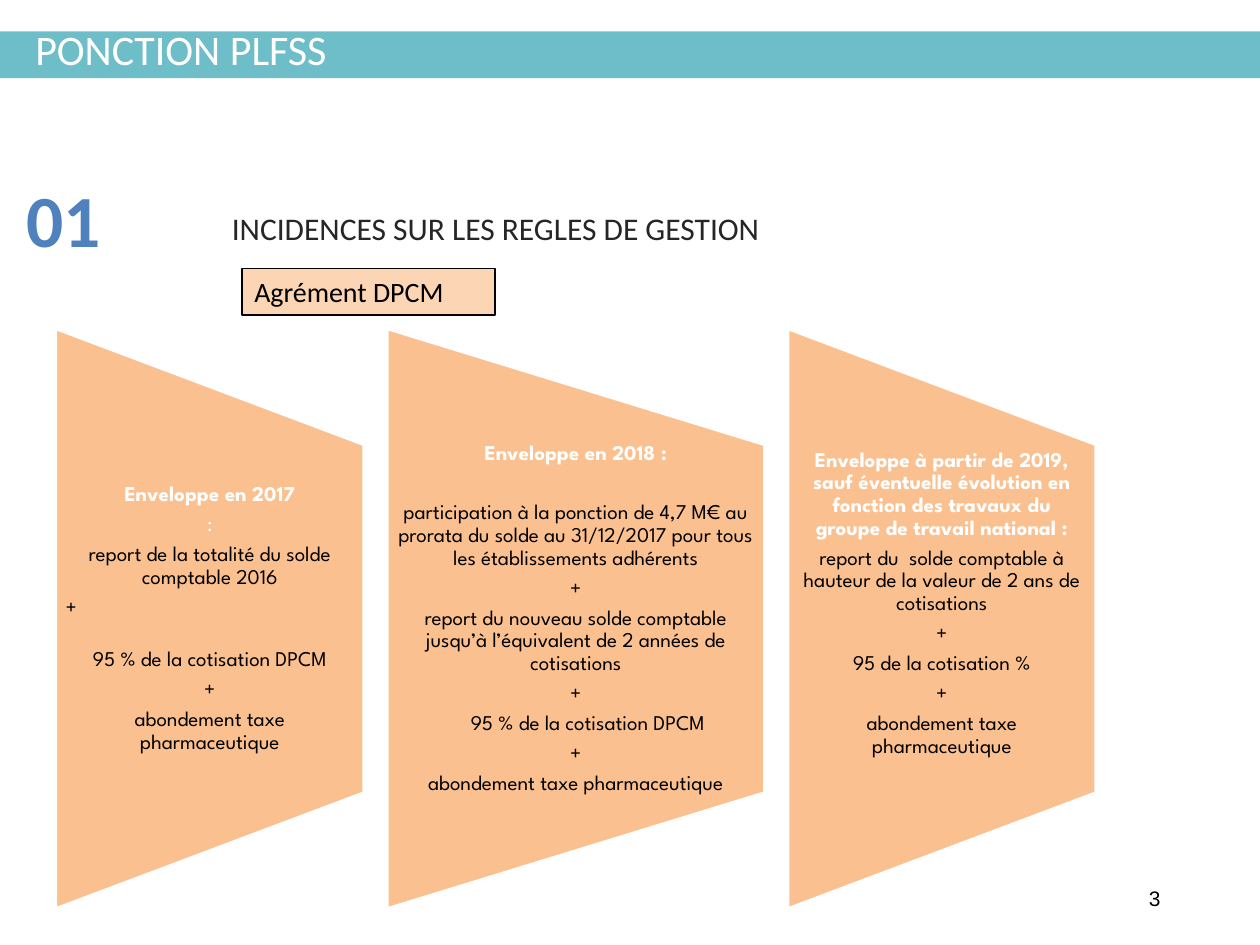
from pptx import Presentation
from pptx.dml.color import RGBColor
from pptx.enum import shapes, text
from pptx.util import Inches, Pt

LEFT, MID = text.PP_ALIGN.LEFT, text.PP_ALIGN.CENTER
PLUS = ("+", {})
TAX = ("abondement taxe pharmaceutique", {})
HEAD = {"color": "FFFFFF", "bold": True}

# width, bottom inset, paragraphs
COLS = [
    (2.45, 0, [
        ("Enveloppe en 2017", HEAD),
        (":", {"color": "FFFFFF"}),
        ("report de la totalité du solde comptable 2016", {}),
        ("+", {"align": LEFT, "after": 17}),
        ("95 % de la cotisation DPCM", {}),
        PLUS, TAX]),
    (3, 0, [
        ("Enveloppe en 2018 :", {**HEAD, "after": 21}),
        ("participation à la ponction de 4,7 M€ au prorata du solde "
         "au 31/12/2017 pour tous les établissements adhérents", {}),
        PLUS,
        ("report du nouveau solde comptable jusqu’à l’équivalent "
         "de 2 années de cotisations", {}),
        PLUS,
        ("95 % de la cotisation DPCM", {"indent": 0.19}),
        PLUS, TAX]),
    (2.45, 0.24, [
        ("Enveloppe à partir de 2019, sauf éventuelle évolution en fonction "
         "des travaux du groupe de travail national :", HEAD),
        ("report du  solde comptable à hauteur de la valeur de 2 ans "
         "de cotisations", {}),
        PLUS,
        ("95 de la cotisation %", {}),
        PLUS, TAX]),
]
START, GAP, CENTER, TALL, TEXT_H = 0.44, 0.18, 4.91, 4.61, 2.76


def rgb(code):
    return RGBColor.from_string(code)


def style(par, size, color, font="Calibri", bold=False):
    f = par.font
    f.size, f.name, f.bold = Pt(size), font, bold
    f.color.rgb = rgb(color)


def frame(shape, sides=0, ends=0, anchor=text.MSO_ANCHOR.TOP):
    tf = shape.text_frame
    tf.word_wrap = True
    tf.auto_size = text.MSO_AUTO_SIZE.NONE
    tf.margin_left = tf.margin_right = Inches(sides)
    tf.margin_top = tf.margin_bottom = Inches(ends)
    tf.vertical_anchor = anchor
    return tf


def block(kind, x, y, w, h, fill, line=None, width=0.75):
    s = slide.shapes.add_shape(kind, *map(Inches, (x, y, w, h)))
    s.shadow.inherit = False
    s.fill.solid()
    s.fill.fore_color.rgb = rgb(fill)
    if line:
        s.line.color.rgb = rgb(line)
        s.line.width = Pt(width)
    else:
        s.line.fill.background()
    return s


def box(x, y, w, h):
    return slide.shapes.add_textbox(*map(Inches, (x, y, w, h)))


def write(tf, words, size, color, font="Calibri", bold=False):
    par = tf.paragraphs[0]
    par.text = words
    par.alignment = LEFT
    style(par, size, color, font, bold)
    return par


def column(x, w, foot, pars):
    trap = block(shapes.MSO_SHAPE.FLOWCHART_MANUAL_OPERATION,
                 x + w / 2 - TALL / 2, CENTER - w / 2, TALL, w,
                 "FAC090", "FFFFFF", 2)
    trap.rotation = 270
    tf = frame(box(x, CENTER - TEXT_H / 2, w, TEXT_H), 0.08, 0,
               text.MSO_ANCHOR.MIDDLE)
    tf.margin_bottom = Inches(foot)
    for i, (words, opt) in enumerate(pars):
        par = tf.add_paragraph() if i else tf.paragraphs[0]
        par.text = words
        par.alignment = opt.get("align", MID)
        par.line_spacing = 0.9
        par.space_after = Pt(opt.get("after", 4.2))
        if "indent" in opt:
            par._p.get_or_add_pPr().set("marL", str(Inches(opt["indent"])))
        style(par, 12, opt.get("color", "000000"), "League Spartan",
              opt.get("bold", False))


prs = Presentation()
prs.slide_width, prs.slide_height = Inches(10), Inches(7.5)
slide = prs.slides.add_slide(prs.slide_layouts[5])

bar = block(shapes.MSO_SHAPE.RECTANGLE, 0, 0.25, 10, 0.37, "6DBEC9")
title = slide.shapes.title
title.element.addprevious(bar.element)
title.left, title.top = Inches(0.28), Inches(0.13)
title.width, title.height = Inches(9.69), Inches(0.56)
par = write(frame(title, anchor=text.MSO_ANCHOR.MIDDLE),
            "PONCTION PLFSS", 24, "FFFFFF")
par.line_spacing = 0.9

write(frame(box(9.02, 6.98, 0.63, 0.3), 0.1, 0.05), "3", 12, "000000", "Arial")
write(frame(box(0.21, 1.38, 1.16, 0.55)), "01", 42, "4F81BD", bold=True)
par = write(frame(box(1.84, 1.72, 7.33, 0.31)),
            "INCIDENCES SUR LES REGLES DE GESTION", 18, "262626")
par.line_spacing = 0.8

label = block(shapes.MSO_SHAPE.RECTANGLE, 1.92, 2.13, 2.01, 0.37,
              "FCD5B5", "000000")
write(frame(label, 0.1, 0.05), "Agrément DPCM", 16, "000000")

x = START
for w, foot, pars in COLS:
    column(x, w, foot, pars)
    x += w + GAP

prs.save("out.pptx")
